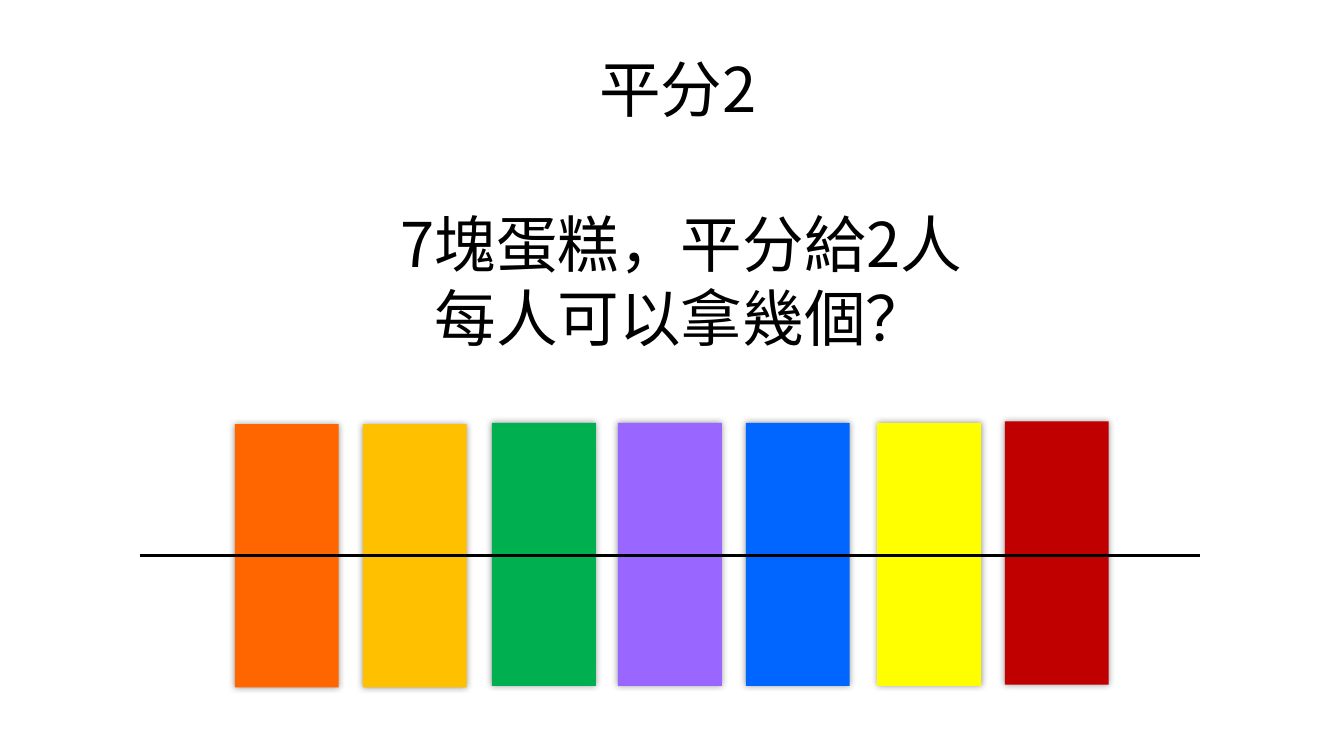
from lxml import etree
from pptx import Presentation
from pptx.dml.color import RGBColor
from pptx.enum.shapes import MSO_CONNECTOR, MSO_SHAPE
from pptx.enum.text import MSO_AUTO_SIZE, PP_ALIGN
from pptx.oxml.ns import qn
from pptx.util import Pt

RECTANGLE = MSO_SHAPE.RECTANGLE
STRAIGHT = MSO_CONNECTOR.STRAIGHT
CENTER = PP_ALIGN.CENTER
GROW = MSO_AUTO_SIZE.SHAPE_TO_FIT_TEXT

FONT = "Noto Sans CJK SC"
COLORS = {
    "black": "000000",
    "orange": "FF6600",
    "gold": "FFC000",
    "green": "00B050",
    "purple": "9966FF",
    "blue": "0066FF",
    "yellow": "FFFF00",
    "red": "C00000",
}

TITLE = ["平分2"]
QUESTION = ["7塊蛋糕，平分給2人", "每人可以拿幾個？"]

CAKE_WIDTH, CAKE_HEIGHT = 74.2, 188
CAKES = [  # colour, left, top
    ("orange", 167.8, 303),
    ("gold", 259.2, 303),
    ("green", 351.4, 302),
    ("purple", 441.4, 302),
    ("blue", 532.8, 302),
    ("yellow", 626.6, 302),
    ("red", 717.8, 301),
]
CUT_LEFT, CUT_RIGHT, CUT_Y = 100, 857.5, 396.7


def rgb(name):
    return RGBColor.from_string(COLORS[name])


def add_effects(shape):
    return etree.SubElement(shape._element.spPr, qn("a:effectLst"))


def add_soft_shadow(shape, blur=5, opacity=40):
    """Surround the shape with an even black blur; blur in points, opacity in percent."""
    shadow = etree.SubElement(add_effects(shape), qn("a:outerShdw"),
                              blurRad=str(Pt(blur)), dist="0", dir="0",
                              algn="ctr", rotWithShape="0")
    color = etree.SubElement(shadow, qn("a:srgbClr"), val=COLORS["black"])
    etree.SubElement(color, qn("a:alpha"), val=str(opacity * 1000))


def add_text(page, lines, left, top, width, height, size=44, color="black"):
    box = page.shapes.add_textbox(Pt(left), Pt(top), Pt(width), Pt(height))
    frame = box.text_frame
    frame.word_wrap = True
    frame.auto_size = GROW
    for index, line in enumerate(lines):
        para = frame.add_paragraph() if index else frame.paragraphs[0]
        para.alignment = CENTER
        span = para.add_run()
        span.text = line
        span.font.size = Pt(size)
        span.font.name = FONT
        span.font.color.rgb = rgb(color)
        etree.SubElement(span.font._element, qn("a:ea"), typeface=FONT)


def add_cake(page, color, left, top):
    cake = page.shapes.add_shape(RECTANGLE, Pt(left), Pt(top),
                                 Pt(CAKE_WIDTH), Pt(CAKE_HEIGHT))
    cake.fill.solid()
    cake.fill.fore_color.rgb = rgb(color)
    cake.line.fill.background()
    add_soft_shadow(cake)


def add_cut(page):
    cut = page.shapes.add_connector(STRAIGHT, Pt(CUT_LEFT), Pt(CUT_Y),
                                    Pt(CUT_RIGHT), Pt(CUT_Y))
    cut.line.color.rgb = rgb("black")
    cut.line.width = Pt(2.25)
    add_effects(cut)


def main():
    deck = Presentation()
    deck.slide_width, deck.slide_height = Pt(960), Pt(540)
    page = deck.slides.add_slide(deck.slide_layouts[6])
    for color, left, top in CAKES:
        add_cake(page, color, left, top)
    add_text(page, QUESTION, 129, 143.3, 715, 113.8)
    add_text(page, TITLE, 126.7, 33.1, 715, 60.5)
    add_cut(page)
    deck.save("out.pptx")


if __name__ == "__main__":
    main()
